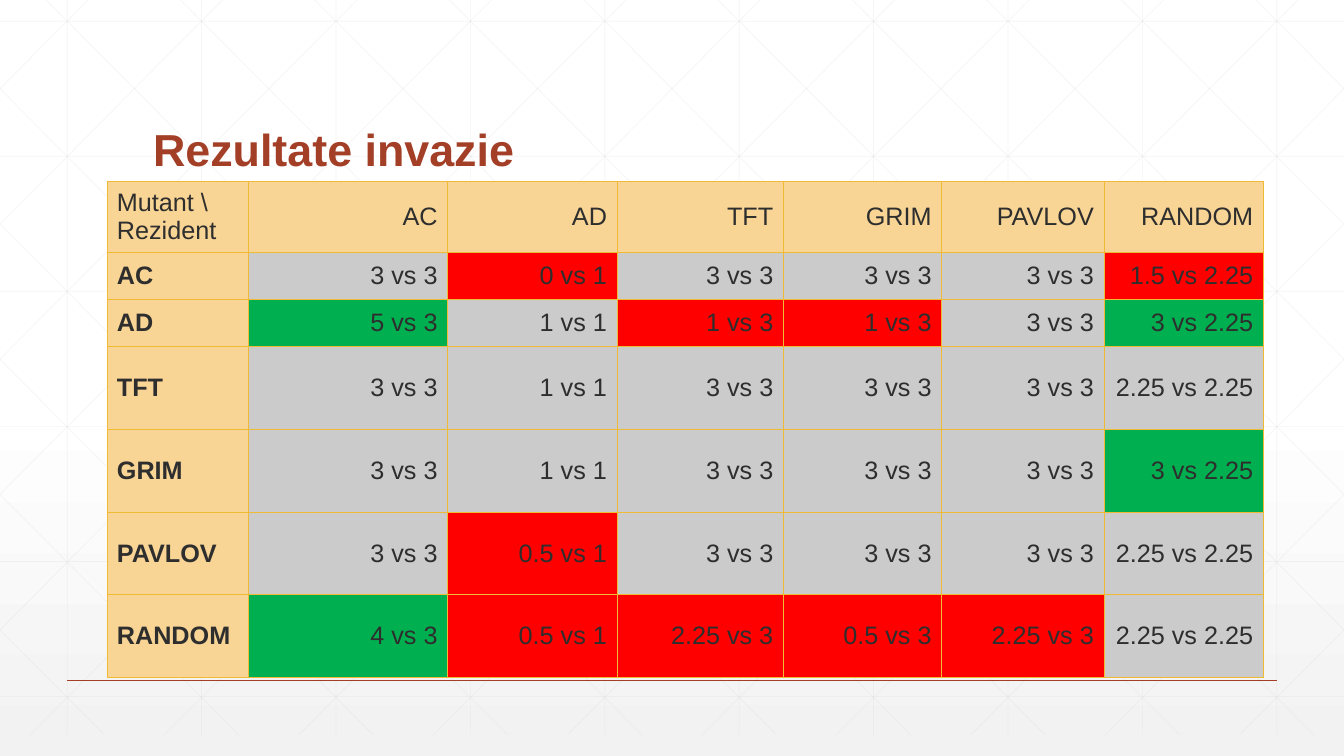
from pptx import Presentation
from pptx.dml.color import RGBColor
from pptx.enum.shapes import MSO_CONNECTOR
from pptx.enum.text import MSO_ANCHOR, PP_ALIGN
from pptx.oxml import parse_xml
from pptx.oxml.ns import nsdecls
from pptx.util import Inches, Pt

WHITE = RGBColor(0xFF, 0xFF, 0xFF)
PALE_GRAY = RGBColor(0xF2, 0xF2, 0xF2)
GRID_GRAY = RGBColor(0xD9, 0xD9, 0xD9)
RUST = RGBColor(0xA4, 0x3F, 0x27)
INK = RGBColor(0x2D, 0x2E, 0x2D)
GOLD = RGBColor(0xF0, 0xBA, 0x34)
SAND = RGBColor(0xF8, 0xD4, 0x95)
GRAY = RGBColor(0xCA, 0xCB, 0xCA)
RED = RGBColor(0xFF, 0x00, 0x00)
GREEN = RGBColor(0x00, 0xB0, 0x50)

WIDTH, HEIGHT = 13.33, 7.5
STEP = WIDTH / 10
TOP, BOTTOM = -0.21, 7.29
DIAGONAL_RUN = 7.45

presentation = Presentation()
presentation.slide_width = Inches(WIDTH)
presentation.slide_height = Inches(HEIGHT)
slide = presentation.slides.add_slide(presentation.slide_layouts[6])

background = slide.background.fill
background.gradient()
background.gradient_angle = 270
for stop, position, color in zip(background.gradient_stops, (0.53, 1), (WHITE, PALE_GRAY)):
    stop.position = position
    stop.color.rgb = color


def add_line(x1, y1, x2, y2, color, width, opacity=100):
    line = slide.shapes.add_connector(
        MSO_CONNECTOR.STRAIGHT, Inches(x1), Inches(y1), Inches(x2), Inches(y2))
    line.line.color.rgb = color
    line.line.width = Pt(width)
    line.element.spPr.append(parse_xml(f'<a:effectLst {nsdecls("a")}/>'))
    if opacity < 100:
        for tint in line.element.spPr.iter('{*}srgbClr'):
            tint.append(parse_xml(f'<a:alpha {nsdecls("a")} val="{opacity * 1000}"/>'))


grid_lines = []
for column in range(10):
    x = STEP * (column + 0.5)
    grid_lines.append((x, TOP, x, BOTTOM))
for row in range(6):
    y = 0.21 + 1.34 * row
    grid_lines.append((0, y, WIDTH, y))
slope = (BOTTOM - TOP) / DIAGONAL_RUN
for index in range(-5, 10):
    start = 0.25 + STEP * index
    left = max(start, 0)
    right = min(start + DIAGONAL_RUN, WIDTH)
    y_left = TOP + (left - start) * slope
    y_right = TOP + (right - start) * slope
    grid_lines.append((left, y_left, right, y_right))
    grid_lines.append((WIDTH - left, y_left, WIDTH - right, y_right))
for ends in grid_lines:
    add_line(*ends, GRID_GRAY, 0.5, 25)
add_line(STEP / 2, HEIGHT * 0.9, WIDTH - STEP / 2, HEIGHT * 0.9, RUST, 1)


def add_text(frame, text, size, color, bold):
    paragraph = frame.paragraphs[0]
    run = paragraph.add_run()
    run.text = text
    run.font.name = 'Arial'
    run.font.size = Pt(size)
    run.font.bold = bold
    run.font.color.rgb = color
    return paragraph


title = slide.shapes.add_textbox(Inches(1.42), Inches(0.55), Inches(10.5), Inches(1.25))
title.text_frame.word_wrap = True
title.text_frame.vertical_anchor = MSO_ANCHOR.BOTTOM
add_text(title.text_frame, 'Rezultate invazie', 32, RUST, True).line_spacing = 0.9

strategies = ['AC', 'AD', 'TFT', 'GRIM', 'PAVLOV', 'RANDOM']
results = [
    ['3 vs 3', '0 vs 1', '3 vs 3', '3 vs 3', '3 vs 3', '1.5 vs 2.25'],
    ['5 vs 3', '1 vs 1', '1 vs 3', '1 vs 3', '3 vs 3', '3 vs 2.25'],
    ['3 vs 3', '1 vs 1', '3 vs 3', '3 vs 3', '3 vs 3', '2.25 vs 2.25'],
    ['3 vs 3', '1 vs 1', '3 vs 3', '3 vs 3', '3 vs 3', '3 vs 2.25'],
    ['3 vs 3', '0.5 vs 1', '3 vs 3', '3 vs 3', '3 vs 3', '2.25 vs 2.25'],
    ['4 vs 3', '0.5 vs 1', '2.25 vs 3', '0.5 vs 3', '2.25 vs 3', '2.25 vs 2.25'],
]
rows = [['Mutant \\ Rezident'] + strategies]
rows += [[name] + scores for name, scores in zip(strategies, results)]
column_widths = [1.4, 1.98, 1.68, 1.65, 1.57, 1.61, 1.58]
row_heights = [0.47] * 3 + [0.82] * 4

table = slide.shapes.add_table(
    len(rows), len(column_widths), Inches(1.06), Inches(1.8),
    Inches(sum(column_widths)), Inches(sum(row_heights))).table
for column, width in zip(table.columns, column_widths):
    column.width = Inches(width)
for row, height in zip(table.rows, row_heights):
    row.height = Inches(height)

for row_index, row in enumerate(rows):
    for column_index, text in enumerate(row):
        cell = table.cell(row_index, column_index)
        cell.vertical_anchor = MSO_ANCHOR.MIDDLE
        is_name = row_index > 0 and column_index == 0
        paragraph = add_text(cell.text_frame, text, 18, INK, is_name)
        if column_index > 0:
            paragraph.alignment = PP_ALIGN.RIGHT
        for side in 'LRTB':
            cell._tc.get_or_add_tcPr().append(parse_xml(
                f'<a:ln{side} {nsdecls("a")} w="{Pt(0.5)}"><a:solidFill>'
                f'<a:srgbClr val="{GOLD}"/></a:solidFill></a:ln{side}>'))
        fill_color = SAND
        if row_index > 0 and column_index > 0:
            mutant, resident = map(float, text.split(' vs '))
            fill_color = GREEN if mutant > resident else RED if mutant < resident else GRAY
        cell.fill.solid()
        cell.fill.fore_color.rgb = fill_color

presentation.save("out.pptx")
